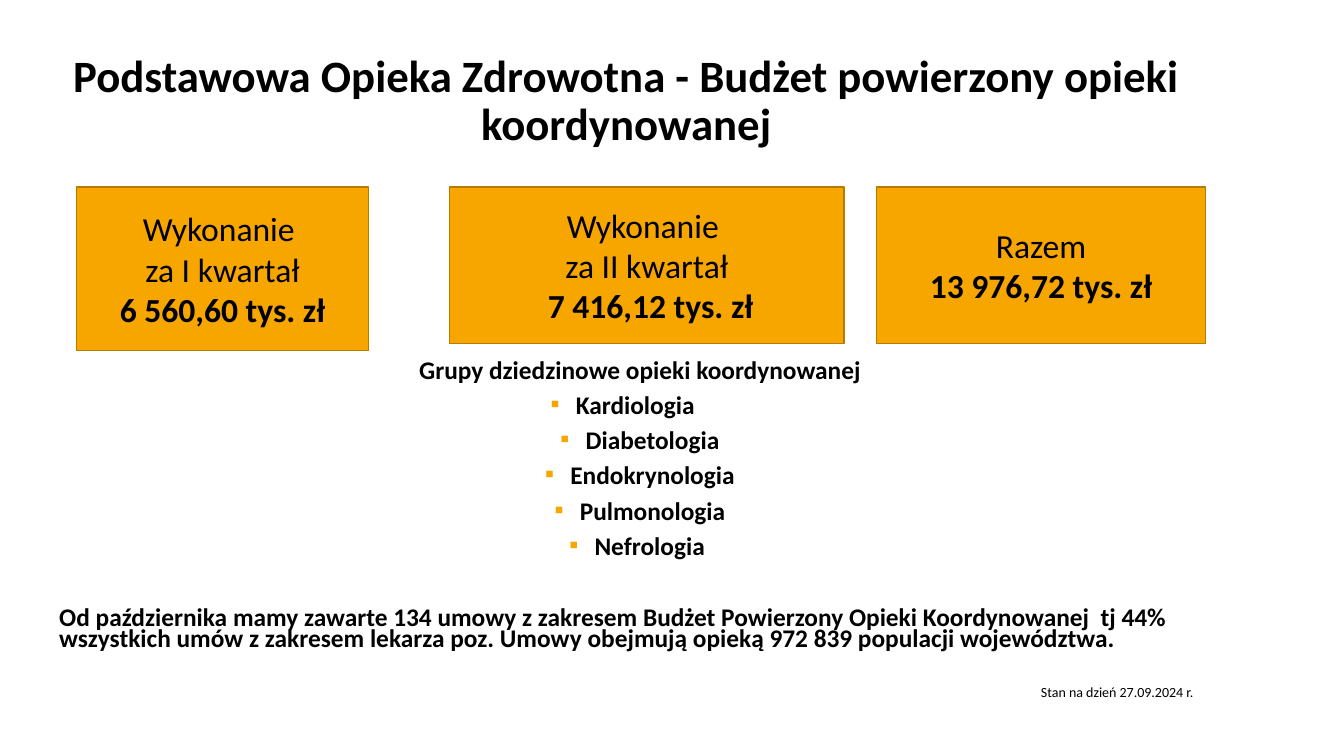
import pptx
import pptx.util
import pptx.dml.color
import pptx.enum.shapes
import pptx.enum.text
import pptx.oxml
import pptx.oxml.ns
from dataclasses import dataclass

PX = 9525  # EMU per px, 96 px to the inch
ALIGN = pptx.enum.text.PP_ALIGN
ANCHOR = pptx.enum.text.MSO_ANCHOR


@dataclass(frozen=True)
class Theme:
    font: str = "Calibri"
    text: str = "000000"
    accent: str = "F7A600"
    outline: str = "B77B00"
    title: float = 32
    card: float = 24
    body: float = 18.1
    footnote: float = 10


THEME = Theme()

# Each card: box in px, plain lines, amount
CARDS = [
    ((73, 178, 278, 156), ["Wykonanie ", "za I kwartał"], "6 560,60 tys. zł"),
    ((428, 178, 376, 149), ["Wykonanie ", "za II kwartał"], " 7 416,12 tys. zł"),
    ((835, 178, 313, 149), ["Razem"], "13 976,72 tys. zł"),
]
HEADING = "Grupy dziedzinowe opieki koordynowanej"
# Each field of care with its left indent in px
FIELDS = [
    ("Kardiologia", 24),
    ("Diabetologia", 57),
    ("Endokrynologia", 57),
    ("Pulmonologia", 57),
    ("Nefrologia ", 57),
]
BODY_INDENT = 33
BULLET_HANG = 24
CONTRACTS = (
    "Od października mamy zawarte 134 umowy z zakresem Budżet Powierzony Opieki "
    "Koordynowanej  tj 44% wszystkich umów z zakresem lekarza poz. "
    "Umowy obejmują opieką 972 839 populacji województwa."
)


def rgb(color):
    return pptx.dml.color.RGBColor.from_string(color)


def px_box(box):
    return [length * PX for length in box]


def write(paragraph, text, size, bold=False, align=ALIGN.CENTER):
    paragraph.text = text
    paragraph.alignment = align
    for run in paragraph.runs:
        run.font.name = THEME.font
        run.font.size = pptx.util.Pt(size)
        run.font.bold = bold
        run.font.color.rgb = rgb(THEME.text)


def text_frame(slide, box):
    frame = slide.shapes.add_textbox(*px_box(box)).text_frame
    frame.word_wrap = True
    return frame


def indent(paragraph, left, hang=0):
    properties = paragraph._p.get_or_add_pPr()
    properties.set("marL", str(left * PX))
    properties.set("indent", str(-hang * PX))


def add_bullet(paragraph):
    namespace = pptx.oxml.ns.nsdecls("a")
    properties = paragraph._p.get_or_add_pPr()
    for element in (
        f'<a:buClr {namespace}><a:srgbClr val="{THEME.accent}"/></a:buClr>',
        f'<a:buFont {namespace} typeface="{THEME.font}"/>',
        f'<a:buChar {namespace} char="▪"/>',
    ):
        properties.append(pptx.oxml.parse_xml(element))


def add_title(slide, box):
    frame = text_frame(slide, box)
    frame.vertical_anchor = ANCHOR.MIDDLE
    title = frame.paragraphs[0]
    write(title, "Podstawowa Opieka Zdrowotna - Budżet powierzony opieki koordynowanej",
          THEME.title, bold=True)
    title.line_spacing = 0.9


def add_card(slide, box, lines, amount):
    card = slide.shapes.add_shape(pptx.enum.shapes.MSO_SHAPE.RECTANGLE, *px_box(box))
    card.shadow.inherit = False
    card.fill.solid()
    card.fill.fore_color.rgb = rgb(THEME.accent)
    card.line.color.rgb = rgb(THEME.outline)
    card.line.width = pptx.util.Pt(1)
    frame = card.text_frame
    frame.word_wrap = True
    frame.vertical_anchor = ANCHOR.MIDDLE
    frame.text = "\n".join(lines + [amount])
    for paragraph in frame.paragraphs:
        write(paragraph, paragraph.text, THEME.card, bold=paragraph.text == amount)


def add_care_groups(slide, box):
    frame = text_frame(slide, box)

    # Heading
    heading = frame.paragraphs[0]
    indent(heading, BODY_INDENT)
    write(heading, HEADING, THEME.body, bold=True)

    # Bulleted fields of care
    for name, left in FIELDS:
        field = frame.add_paragraph()
        indent(field, left, BULLET_HANG)
        add_bullet(field)
        write(field, name, THEME.body, bold=True)
        field.space_before = pptx.util.Pt(10)

    # Contracts, set apart from the list
    contracts = frame.add_paragraph()
    indent(contracts, BODY_INDENT)
    write(contracts, CONTRACTS, THEME.body, bold=True, align=ALIGN.LEFT)
    contracts.space_before = pptx.util.Pt(35.5)

    for paragraph in frame.paragraphs:
        paragraph.line_spacing = 0.7


def add_footnote(slide, box):
    frame = text_frame(slide, box)
    write(frame.paragraphs[0], "Stan na dzień 27.09.2024 r.", THEME.footnote,
          align=ALIGN.LEFT)


def main():
    deck = pptx.Presentation()
    deck.slide_width, deck.slide_height = 1280 * PX, 720 * PX
    slide = deck.slides.add_slide(deck.slide_layouts[6])
    add_care_groups(slide, (47 - BODY_INDENT, 340, 1125 + BODY_INDENT, 320))
    add_title(slide, (55, 38, 1083, 118))
    for box, lines, amount in CARDS:
        add_card(slide, box, lines, amount)
    add_footnote(slide, (982, 646, 236, 26))
    deck.save("out.pptx")


if __name__ == "__main__":
    main()
